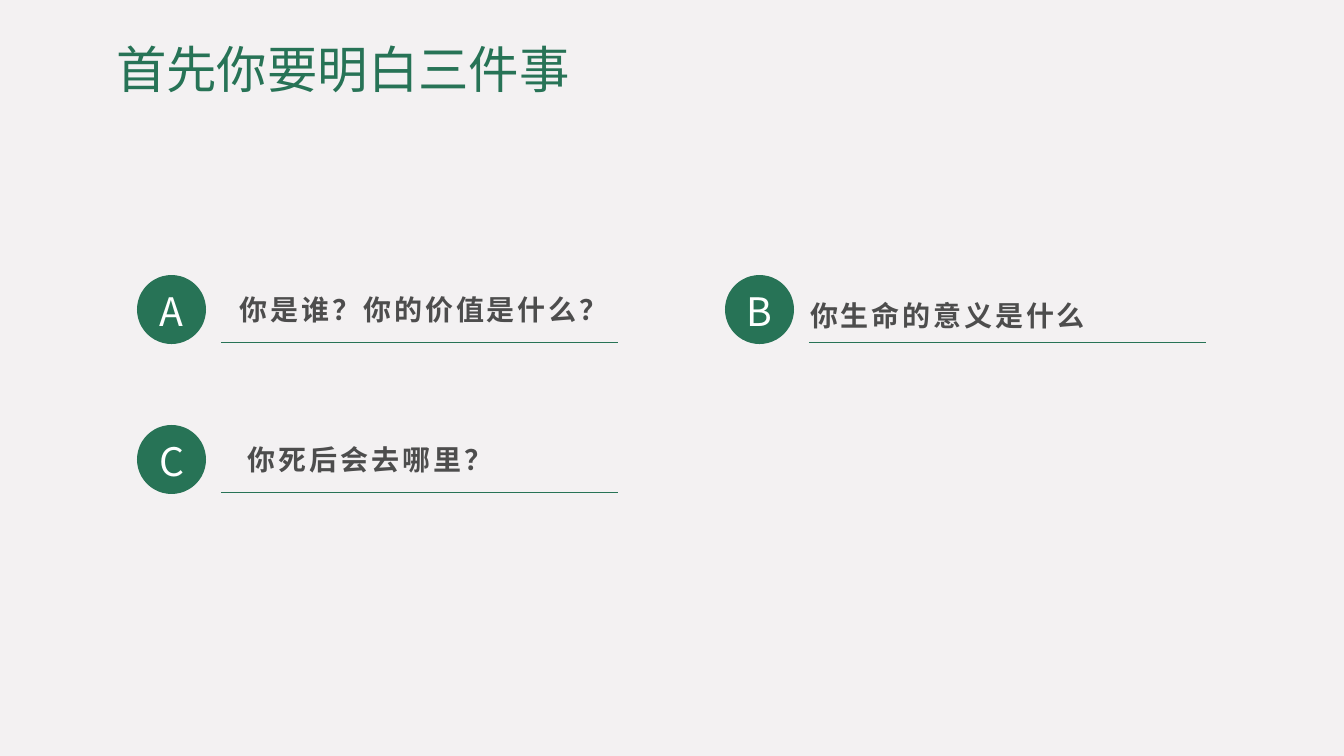
from lxml.etree import SubElement
from pptx import Presentation
from pptx.dml.color import RGBColor
from pptx.enum.shapes import MSO_CONNECTOR as Connector, MSO_SHAPE as Shape
from pptx.enum.text import MSO_ANCHOR as Anchor, MSO_AUTO_SIZE as AutoSize, PP_ALIGN as Align
from pptx.oxml.ns import qn
from pptx.util import Emu, Pt

PAPER = RGBColor(0xF3, 0xF1, 0xF2)
GREEN = RGBColor(0x27, 0x73, 0x56)
GREY = RGBColor(0x4D, 0x4D, 0x4D)
WHITE = RGBColor(0xFE, 0xFF, 0xFF)
FONT = "Noto Sans CJK SC"
PAGE_WIDTH, PAGE_HEIGHT = 1344, 756
SCALE = 12192000 / PAGE_WIDTH


def px(length):
    return Emu(round(length * SCALE))


class Canvas:
    def __init__(self, deck):
        self.page = deck.slides.add_slide(deck.slide_layouts[5])
        fill = self.page.background.fill
        fill.solid()
        fill.fore_color.rgb = PAPER

    def add_text(self, frame, text, size, color, align=Align.LEFT, line=1.0, bold=False, spacing=0):
        para = frame.paragraphs[0]
        para.alignment = align
        para.line_spacing = line
        span = para.add_run()
        span.text = text
        font = span.font
        font.name, font.size, font.bold = FONT, Pt(size), bold
        font.color.rgb = color
        props = span._r.get_or_add_rPr()
        props.set("lang", "zh-CN")
        if spacing:
            props.set("spc", str(spacing * 100))
        SubElement(props, qn("a:ea")).set("typeface", FONT)

    def inset(self, frame, left):
        frame.margin_left = px(left)
        frame.margin_top = frame.margin_right = frame.margin_bottom = 0

    def title(self, text, left, top, width, height):
        box = self.page.shapes.title
        box.left, box.top, box.width, box.height = map(px, (left, top, width, height))
        frame = box.text_frame
        frame.auto_size = AutoSize.NONE
        frame.vertical_anchor = Anchor.TOP
        self.add_text(frame, text, 36, GREEN, line=0.9)

    def rule(self, left, top, width):
        line = self.page.shapes.add_connector(
            Connector.STRAIGHT, px(left), px(top), px(left + width), px(top))
        line.line.color.rgb = GREEN
        line.line.width = Pt(0.5)
        SubElement(line._element.spPr, qn("a:effectLst"))

    def label(self, text, left, top, width, height):
        box = self.page.shapes.add_textbox(*map(px, (left, top, width, height)))
        frame = box.text_frame
        frame.word_wrap = True
        frame.vertical_anchor = Anchor.MIDDLE
        self.inset(frame, 8)
        self.add_text(frame, text, 20, GREY, bold=True, spacing=2)

    def badge(self, letter, left, top):
        disc = self.page.shapes.add_shape(Shape.OVAL, px(left), px(top), px(69), px(69))
        disc.shadow.inherit = False
        disc.fill.solid()
        disc.fill.fore_color.rgb = GREEN
        disc.line.fill.background()
        frame = disc.text_frame
        frame.vertical_anchor = Anchor.BOTTOM
        self.inset(frame, 0)
        self.add_text(frame, letter, 28, WHITE, align=Align.CENTER, line=1.3)


def main():
    deck = Presentation()
    deck.slide_width, deck.slide_height = px(PAGE_WIDTH), px(PAGE_HEIGHT)
    canvas = Canvas(deck)
    canvas.title("首先你要明白三件事", 106, 40, 1085, 94)

    questions = [
        ("A", "你是谁？你的价值是什么？", (232, 234, 417, 150)),
        ("B", "你生命的意义是什么", (802, 199, 465, 233)),
        ("C", "你死后会去哪里？", (240, 372, 481, 174)),
    ]
    for index, (letter, text, area) in enumerate(questions):
        row, column = divmod(index, 2)
        left, top = 137 + 588 * column, 275 + 150 * row
        canvas.rule(left + 84, top + 67, 397)
        canvas.label(text, *area)
        canvas.badge(letter, left, top)

    deck.save("out.pptx")


if __name__ == "__main__":
    main()
